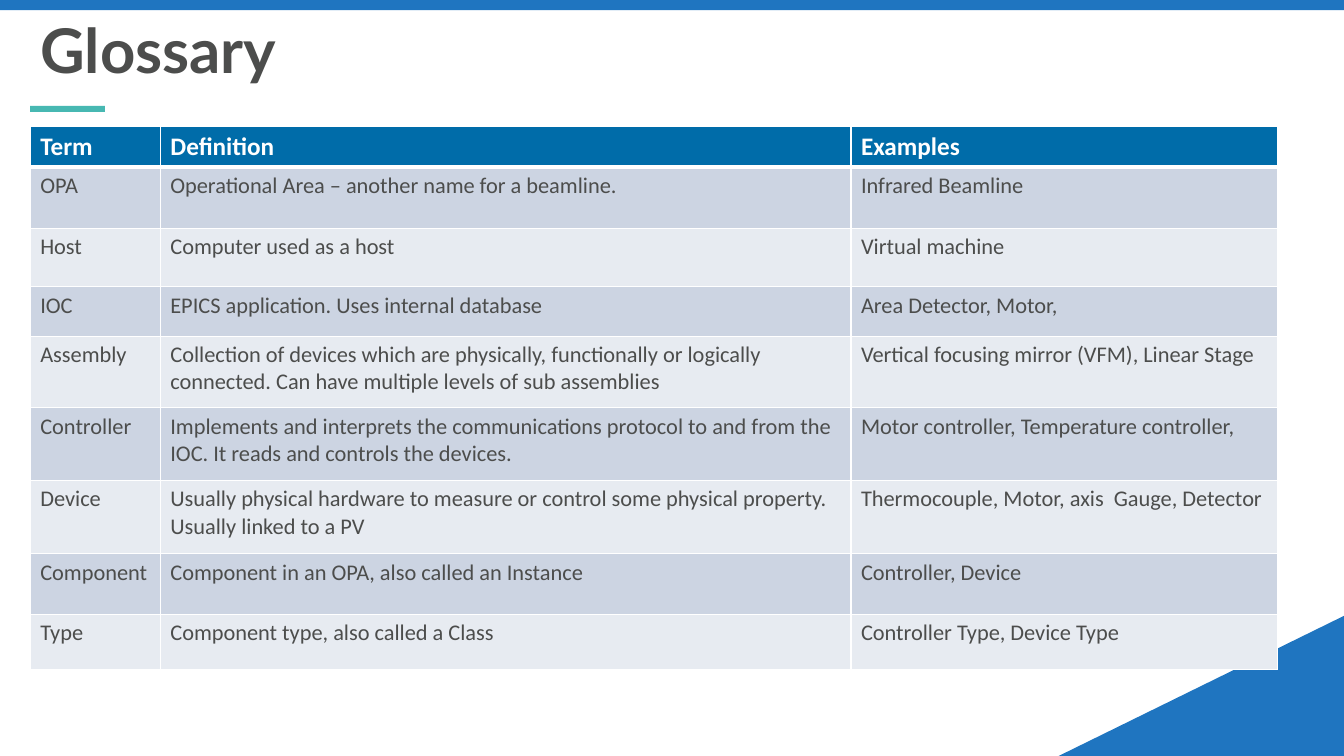
from lxml.etree import SubElement
from pptx import Presentation
from pptx.dml.color import RGBColor
from pptx.enum.shapes import MSO_SHAPE as Shape
from pptx.enum.text import MSO_ANCHOR as Anchor, PP_ALIGN as Align
from pptx.oxml.ns import qn
from pptx.util import Inches, Pt

COLORS = {
    "blue": "1F75C0",
    "teal": "47B8B2",
    "header": "006CA9",
    "odd_row": "CCD4E2",
    "even_row": "E7EBF1",
    "text": "4C4D4C",
    "white": "FFFFFF",
}
HEADINGS = ("Term", "Definition", "Examples")
COLUMN_WIDTHS = (1.29, 6.85, 4.23)
HEADER_HEIGHT = 0.4
# Row height, then term, definition and examples
GLOSSARY = [
    (0.61, "OPA", "Operational Area – another name for a beamline.", "Infrared Beamline"),
    (0.58, "Host", "Computer used as a host", "Virtual machine"),
    (0.49, "IOC", "EPICS application. Uses internal database", "Area Detector, Motor,"),
    (0.71, "Assembly",
     "Collection of devices which are physically, functionally or logically connected. "
     "Can have multiple levels of sub assemblies",
     "Vertical focusing mirror (VFM), Linear Stage"),
    (0.72, "Controller",
     "Implements and interprets the communications protocol to and from the IOC. "
     "It reads and controls the devices.",
     "Motor controller, Temperature controller,"),
    (0.73, "Device",
     "Usually physical hardware to measure or control some physical property. "
     "Usually linked to a PV",
     "Thermocouple, Motor, axis  Gauge, Detector"),
    (0.6, "Component", "Component in an OPA, also called an Instance", "Controller, Device"),
    (0.55, "Type", "Component type, also called a Class", "Controller Type, Device Type"),
]


class SlideBuilder:
    """Holds the fonts and the slide being drawn."""

    title_font = "Lato"
    body_font = "Calibri"

    def __init__(self, slide):
        self.slide = slide

    def color(self, name):
        return RGBColor.from_string(COLORS[name])

    def run(self, paragraph, text, font, size, color, bold=False):
        run = paragraph.add_run()
        run.text = text
        run.font.name = font
        run.font.size = Pt(size)
        run.font.bold = bold
        run.font.color.rgb = self.color(color)

    def title(self, text, left, top, width, height):
        title = self.slide.shapes.title
        title.left, title.top = Inches(left), Inches(top)
        title.width, title.height = Inches(width), Inches(height)
        title.text_frame.vertical_anchor = Anchor.BOTTOM
        heading = title.text_frame.paragraphs[0]
        heading.alignment = Align.LEFT
        heading.line_spacing = 0.9
        self.run(heading, text, self.title_font, 44, "text", bold=True)

    def block(self, kind, left, top, width, height, color, flip=False):
        block = self.slide.shapes.add_shape(
            kind, Inches(left), Inches(top), Inches(width), Inches(height))
        block.shadow.inherit = False
        block.fill.solid()
        block.fill.fore_color.rgb = self.color(color)
        block.line.fill.background()
        if flip:
            block._element.spPr.get_or_add_xfrm().set("flipH", "1")

    def borders(self, cell, top=1, bottom=1):
        """Draw white cell borders, with widths in points."""
        properties = cell._tc.get_or_add_tcPr()
        for side, width in (("L", 1), ("R", 1), ("T", top), ("B", bottom)):
            line = SubElement(properties, qn(f"a:ln{side}"), w=str(Pt(width)))
            fill = SubElement(line, qn("a:solidFill"))
            SubElement(fill, qn("a:srgbClr"), val=COLORS["white"])

    def table(self, left, top, widths, heights, rows):
        table = self.slide.shapes.add_table(
            len(rows), len(widths), Inches(left), Inches(top),
            Inches(sum(widths)), Inches(sum(heights))).table
        for column, width in zip(table.columns, widths):
            column.width = Inches(width)
        for index, (height, texts) in enumerate(zip(heights, rows)):
            table.rows[index].height = Inches(height)
            is_header = index == 0
            size, ink = (18, "white") if is_header else (16, "text")
            fill = "header" if is_header else "odd_row" if index % 2 else "even_row"
            for cell, text in zip(table.rows[index].cells, texts):
                self.borders(cell, top=3 if index == 1 else 1, bottom=3 if is_header else 1)
                cell.fill.solid()
                cell.fill.fore_color.rgb = self.color(fill)
                self.run(cell.text_frame.paragraphs[0], text, self.body_font,
                         size, ink, bold=is_header)


def main():
    deck = Presentation()
    deck.slide_width, deck.slide_height = Inches(13.33), Inches(7.5)
    page = SlideBuilder(deck.slides.add_slide(deck.slide_layouts[5]))

    page.block(Shape.RIGHT_TRIANGLE, 10.5, 6.11, 2.83, 1.39, "blue", flip=True)
    page.block(Shape.RECTANGLE, 0, 0, 13.33, 0.1, "blue")
    page.title("Glossary", 0.3, 0, 12.36, 0.91)
    page.table(0.3, 1.25, COLUMN_WIDTHS,
               [HEADER_HEIGHT] + [height for height, *_ in GLOSSARY],
               [HEADINGS] + [texts for _, *texts in GLOSSARY])
    page.block(Shape.RECTANGLE, 0.3, 1.05, 0.74, 0.06, "teal")

    deck.save("out.pptx")


if __name__ == "__main__":
    main()
